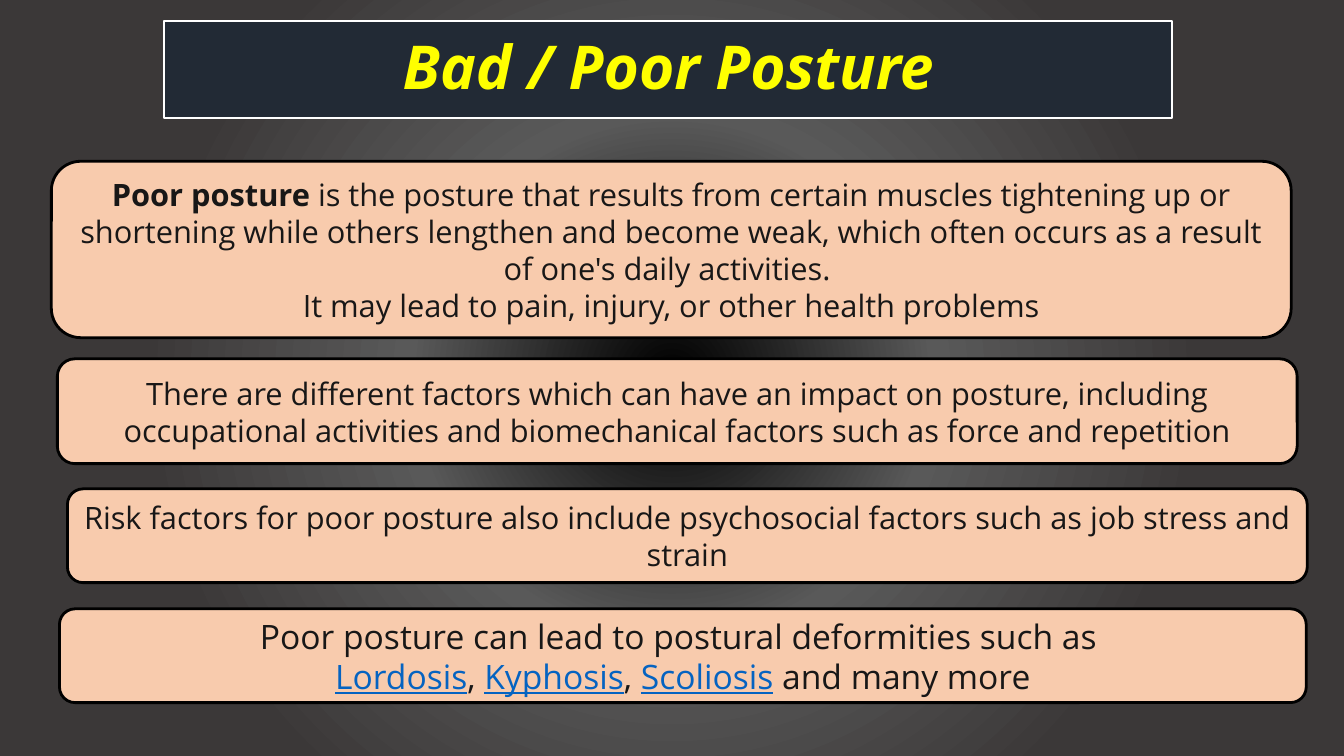
from dataclasses import dataclass

from pptx import Presentation
from pptx.dml.color import RGBColor
from pptx.enum.shapes import MSO_SHAPE
from pptx.enum.text import MSO_ANCHOR, MSO_AUTO_SIZE, PP_ALIGN
from pptx.oxml import parse_xml
from pptx.oxml.ns import nsdecls
from pptx.util import Pt

ROUNDED = MSO_SHAPE.ROUNDED_RECTANGLE
MIDDLE = MSO_ANCHOR.MIDDLE
CENTER = PP_ALIGN.CENTER
NO_FIT = MSO_AUTO_SIZE.NONE
TITLE_ONLY = 5

TITLE = "Bad / Poor Posture"
TITLE_BOX = (117.4, 15.1, 720, 69.1)

# Each card: box in points, text size, paragraphs made of (text, style) runs.
CARDS = [
    ((36.7, 115.2, 885.6, 126), 22, [
        [("Poor posture", "bold"),
         (" is the posture that results from certain muscles tightening up or "
          "shortening while others lengthen and become weak, which often occurs "
          "as a result of one's daily activities. ", "plain")],
        [("It may lead to pain, injury, or other health problems", "plain")],
    ]),
    ((41, 256.3, 885.6, 74.9), 22, [
        [("There are different factors which can have an impact on posture, "
          "including occupational activities and biomechanical factors such as "
          "force and repetition", "plain")],
    ]),
    ((48.2, 349.2, 885.6, 67), 22, [
        [("Risk factors for poor posture also include psychosocial factors such "
          "as job stress and strain", "plain")],
    ]),
    ((42.5, 434.9, 890.6, 67), 24, [
        [("Poor posture can lead to postural deformities such as ", "plain")],
        [("Lordosis", "term"), (", ", "plain"), ("Kyphosis", "term"),
         (", ", "plain"), ("Scoliosis", "term"), (" and many more", "plain")],
    ]),
]


@dataclass(frozen=True)
class Theme:
    font: str = "Open Sans"
    title_size: float = 43.2
    title_text: str = "FFFF00"
    title_fill: str = "222A35"
    title_line: str = "FFFFFF"
    card_fill: str = "F8CBAD"
    card_line: str = "000000"
    card_text: str = "181717"
    term: str = "0563C1"
    backdrop: tuple = ((0, "000000"), (34, "595959"), (69, "3B3838"), (97, "3B3838"))


THEME = Theme()


def rgb(value):
    return RGBColor.from_string(value)


def paint(shape, fill, line, width):
    shape.fill.solid()
    shape.fill.fore_color.rgb = rgb(fill)
    shape.line.color.rgb = rgb(line)
    shape.line.width = Pt(width)
    shape.shadow.inherit = False


def set_backdrop(s):
    """Give the slide a circular gradient that starts at its centre."""
    stops = "".join(
        f'<a:gs pos="{pos * 1000}"><a:srgbClr val="{color}"/></a:gs>'
        for pos, color in THEME.backdrop)
    s.element.cSld.insert(0, parse_xml(
        f'<p:bg {nsdecls("p", "a")}><p:bgPr><a:gradFill rotWithShape="1">'
        f'<a:gsLst>{stops}</a:gsLst><a:path path="circle">'
        '<a:fillToRect l="50000" t="50000" r="50000" b="50000"/></a:path>'
        '</a:gradFill><a:effectLst/></p:bgPr></p:bg>'))


def set_title(s):
    title = s.shapes.title
    title.left, title.top, title.width, title.height = map(Pt, TITLE_BOX)
    paint(title, THEME.title_fill, THEME.title_line, 1.5)
    tf = title.text_frame
    tf.text = TITLE
    tf.word_wrap = True
    tf.auto_size = NO_FIT
    tf.vertical_anchor = MIDDLE
    tf.margin_left = tf.margin_right = tf.margin_top = tf.margin_bottom = Pt(14.4)
    p = tf.paragraphs[0]
    p.alignment = CENTER
    p.line_spacing = 0.9
    p.font.name = THEME.font
    p.font.size = Pt(THEME.title_size)
    p.font.bold = p.font.italic = True
    p.font.color.rgb = rgb(THEME.title_text)


def add_card(s, box, size, paragraphs):
    card = s.shapes.add_shape(ROUNDED, *map(Pt, box))
    paint(card, THEME.card_fill, THEME.card_line, 2)
    tf = card.text_frame
    tf.word_wrap = True
    tf.vertical_anchor = MIDDLE
    for i, runs in enumerate(paragraphs):
        p = tf.add_paragraph() if i else tf.paragraphs[0]
        p.alignment = CENTER
        p.font.name = THEME.font
        p.font.size = Pt(size)
        for text, style in runs:
            r = p.add_run()
            r.text = text
            is_term = style == "term"
            r.font.color.rgb = rgb(THEME.term if is_term else THEME.card_text)
            r.font.underline = is_term
            r.font.bold = style == "bold"


def main():
    prs = Presentation()
    prs.slide_width, prs.slide_height = Pt(960), Pt(540)
    s = prs.slides.add_slide(prs.slide_layouts[TITLE_ONLY])
    set_backdrop(s)
    set_title(s)
    for card in CARDS:
        add_card(s, *card)
    prs.save("out.pptx")


if __name__ == "__main__":
    main()
